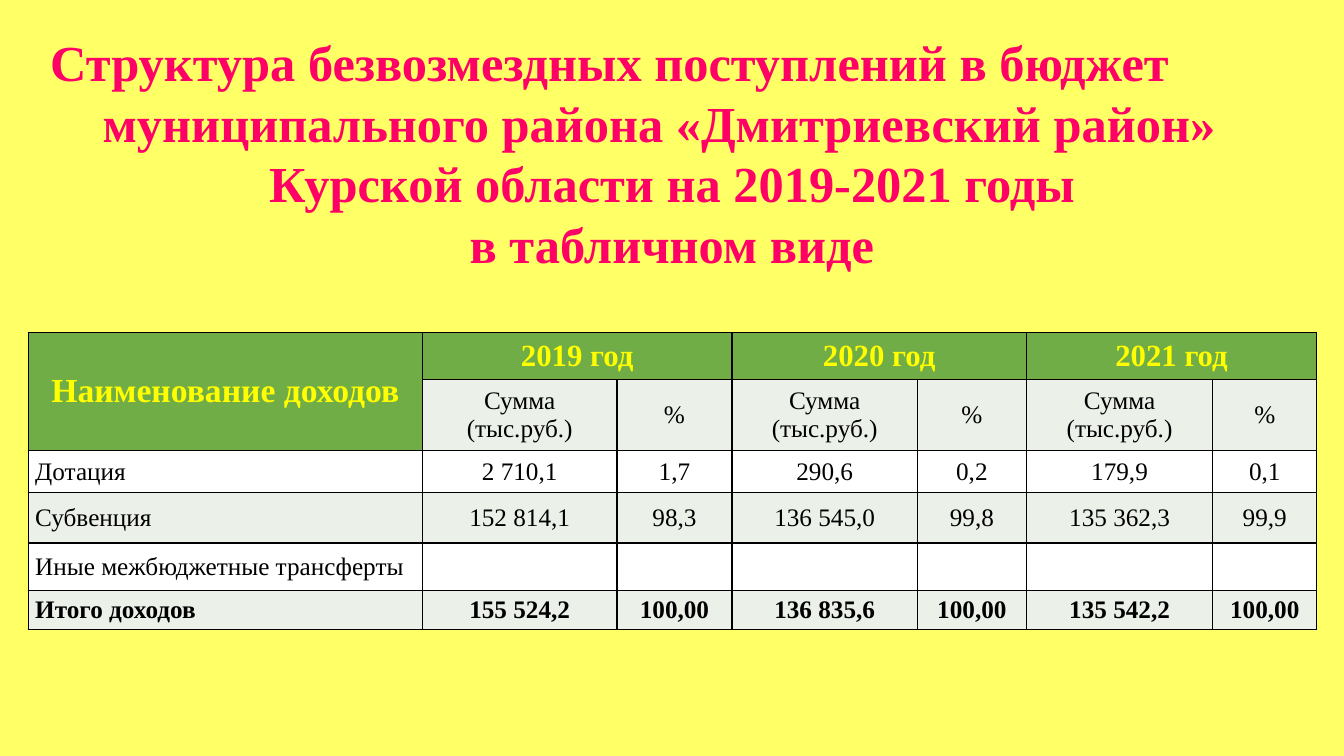
from lxml.etree import SubElement
from pptx import Presentation
from pptx.dml.color import RGBColor
from pptx.enum.text import MSO_ANCHOR, PP_ALIGN
from pptx.oxml.ns import qn
from pptx.util import Inches, Pt

FACE = "Times New Roman"
GREEN, PALE, WHITE = "70AD47", "EBF1E9", "FFFFFF"
HEAD = {"size": Pt(22), "bold": True, "color": "FFFF00"}
BODY = {"size": Pt(18), "bold": False, "color": "000000"}
TOTAL = {**BODY, "bold": True}

# Each title line with its left indent in inches; None means centred
TITLE = [
    ("Структура безвозмездных поступлений в бюджет", 0.4),
    ("муниципального района «Дмитриевский район»", 0.92),
    ("Курской области на 2019-2021 годы", None),
    ("в табличном виде", None),
]
YEARS = ["2019 год", "2020 год", "2021 год"]
WIDTHS = [3.91, 1.93, 1.14, 1.84, 1.08, 1.85, 1.03]
HEIGHTS = [0.44, 0.65, 0.42, 0.5, 0.47, 0.39]
INCOME = [
    ["Дотация", "2 710,1", "1,7", "290,6", "0,2", "179,9", "0,1"],
    ["Субвенция", "152 814,1", "98,3", "136 545,0", "99,8", "135 362,3", "99,9"],
    ["Иные межбюджетные трансферты"] + [""] * 6,
    ["Итого доходов", "155 524,2", "100,00", "136 835,6", "100,00",
     "135 542,2", "100,00"],
]


def paint(fill, color):
    fill.solid()
    fill.fore_color.rgb = RGBColor.from_string(color)


def style(font, look):
    font.name = FACE
    for name, value in look.items():
        if name == "color":
            font.color.rgb = RGBColor.from_string(value)
        else:
            setattr(font, name, value)


def write(para, text, look, align=PP_ALIGN.CENTER):
    para.alignment = align
    run = para.add_run()
    run.text = text
    style(run.font, look)


def border(cell):
    props = cell._tc.get_or_add_tcPr()
    for side in ("a:lnL", "a:lnR", "a:lnT", "a:lnB"):
        line = SubElement(props, qn(side), w=str(Pt(1)))
        fill = SubElement(line, qn("a:solidFill"))
        SubElement(fill, qn("a:srgbClr"), val="000000")


def fill_cell(cell, text, look, color, align=PP_ALIGN.CENTER):
    paint(cell.fill, color)
    cell.vertical_anchor = MSO_ANCHOR.MIDDLE
    para = cell.text_frame.paragraphs[0]
    if text:
        write(para, text, look, align)
    else:
        style(para.font, look)


def add_title(slide):
    box = slide.shapes.add_textbox(
        Inches(0), Inches(0.24), Inches(13.33), Inches(2.54))
    frame = box.text_frame
    frame.word_wrap = True
    frame.vertical_anchor = MSO_ANCHOR.MIDDLE
    look = {"size": Pt(36), "bold": True, "color": "FF0066"}
    for row, (text, indent) in enumerate(TITLE):
        para = frame.add_paragraph() if row else frame.paragraphs[0]
        para.line_spacing = Pt(43.2)
        if indent is None:
            write(para, text, look)
        else:
            write(para, text, look, PP_ALIGN.LEFT)
            para._p.get_or_add_pPr().set("marL", str(Inches(indent)))


def add_grid(slide):
    table = slide.shapes.add_table(
        len(HEIGHTS), len(WIDTHS), Inches(0.28), Inches(3.3),
        Inches(sum(WIDTHS)), Inches(sum(HEIGHTS))).table
    table.first_row = table.horz_banding = False
    for col, width in zip(table.columns, WIDTHS):
        col.width = Inches(width)
    for row, height in zip(table.rows, HEIGHTS):
        row.height = Inches(height)
    for cell in table.iter_cells():
        border(cell)
    return table


def fill_head(table):
    table.cell(0, 0).merge(table.cell(1, 0))
    fill_cell(table.cell(0, 0), "Наименование доходов",
              {**HEAD, "size": Pt(24)}, GREEN)
    for i, year in enumerate(YEARS):
        col = 1 + 2 * i
        table.cell(0, col).merge(table.cell(0, col + 1))
        fill_cell(table.cell(0, col), year, HEAD, GREEN)
        fill_cell(table.cell(1, col), "Сумма (тыс.руб.)", BODY, PALE)
        fill_cell(table.cell(1, col + 1), "%", BODY, PALE)


def fill_body(table):
    inset = {"margin_left": 0.07, "margin_right": 0.07,
             "margin_top": 0, "margin_bottom": 0}
    for r, texts in enumerate(INCOME):
        look = TOTAL if r == len(INCOME) - 1 else BODY
        for c, text in enumerate(texts):
            cell = table.cell(r + 2, c)
            for name, value in inset.items():
                setattr(cell, name, Inches(value))
            fill_cell(cell, text, look, PALE if r % 2 else WHITE,
                      PP_ALIGN.CENTER if c else PP_ALIGN.LEFT)


def main():
    deck = Presentation()
    deck.slide_width, deck.slide_height = Inches(13.33), Inches(7.5)
    slide = deck.slides.add_slide(deck.slide_layouts[6])
    paint(slide.background.fill, "FFFF66")
    add_title(slide)
    table = add_grid(slide)
    fill_head(table)
    fill_body(table)
    deck.save("out.pptx")


if __name__ == "__main__":
    main()
